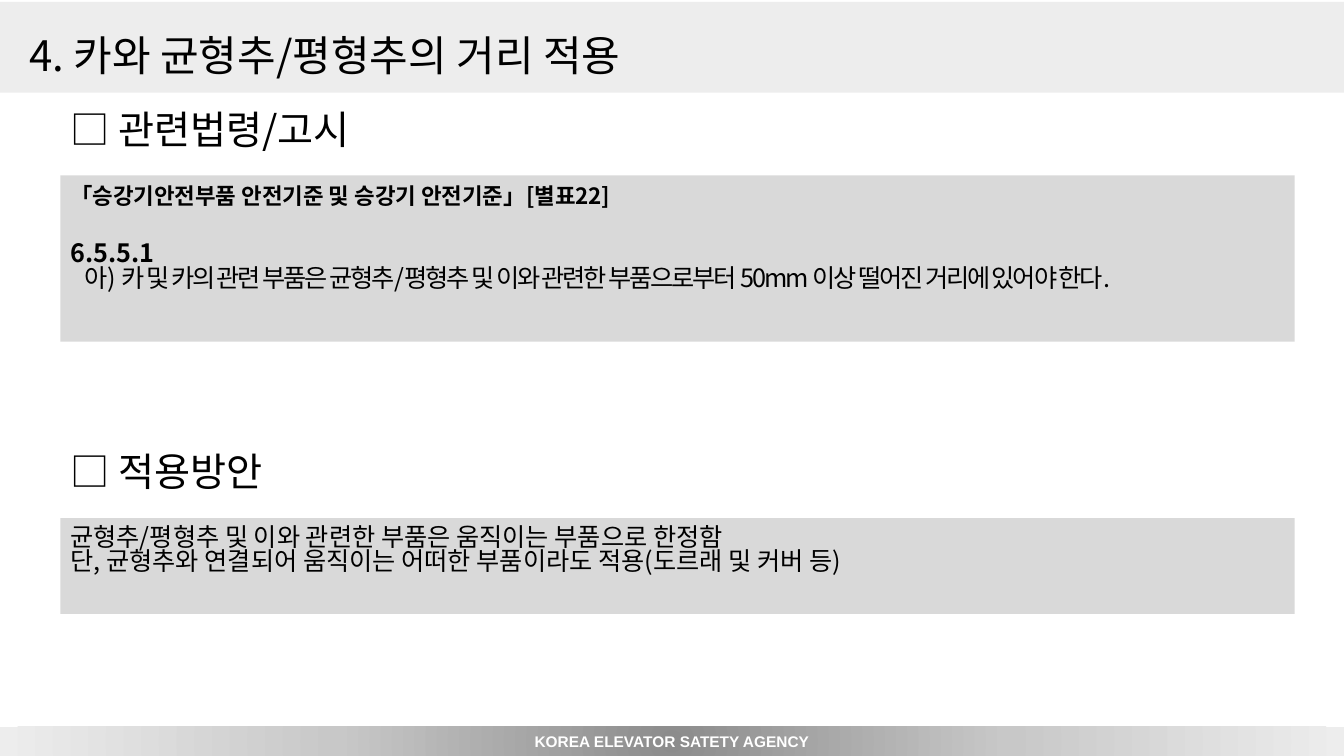
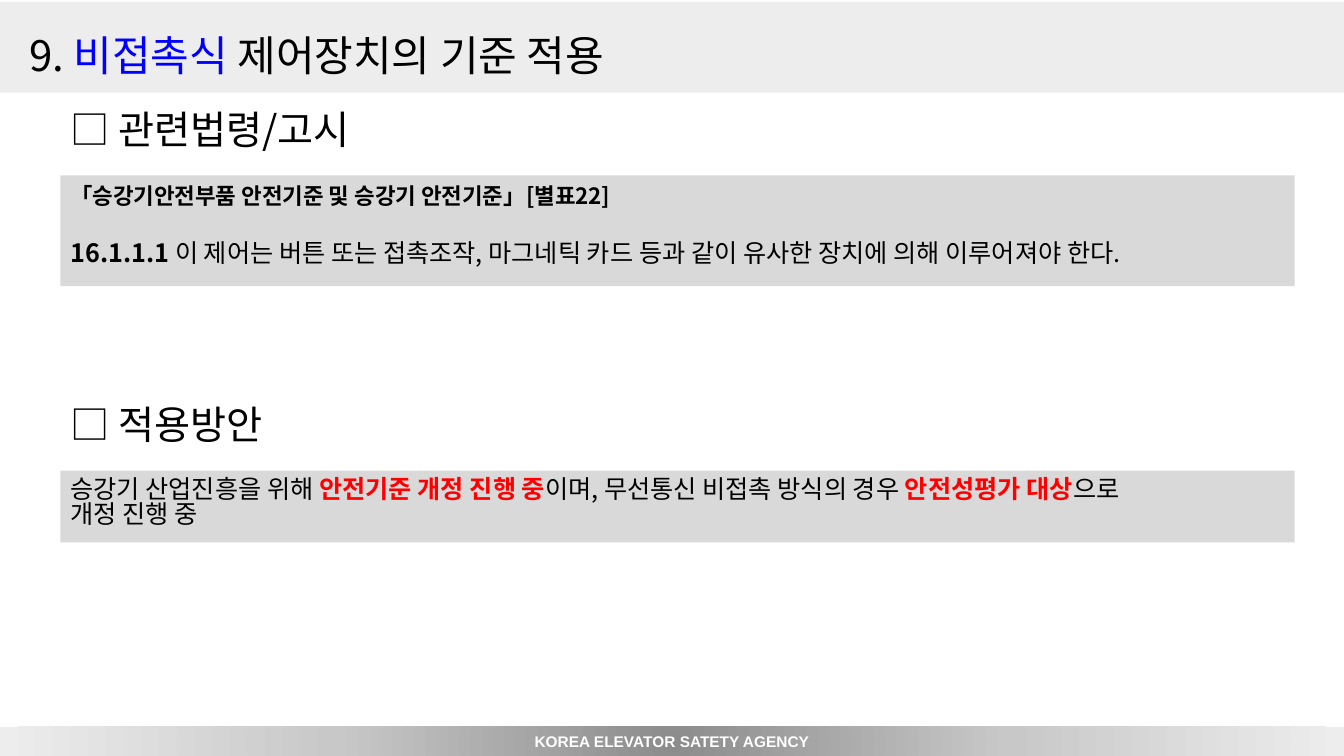
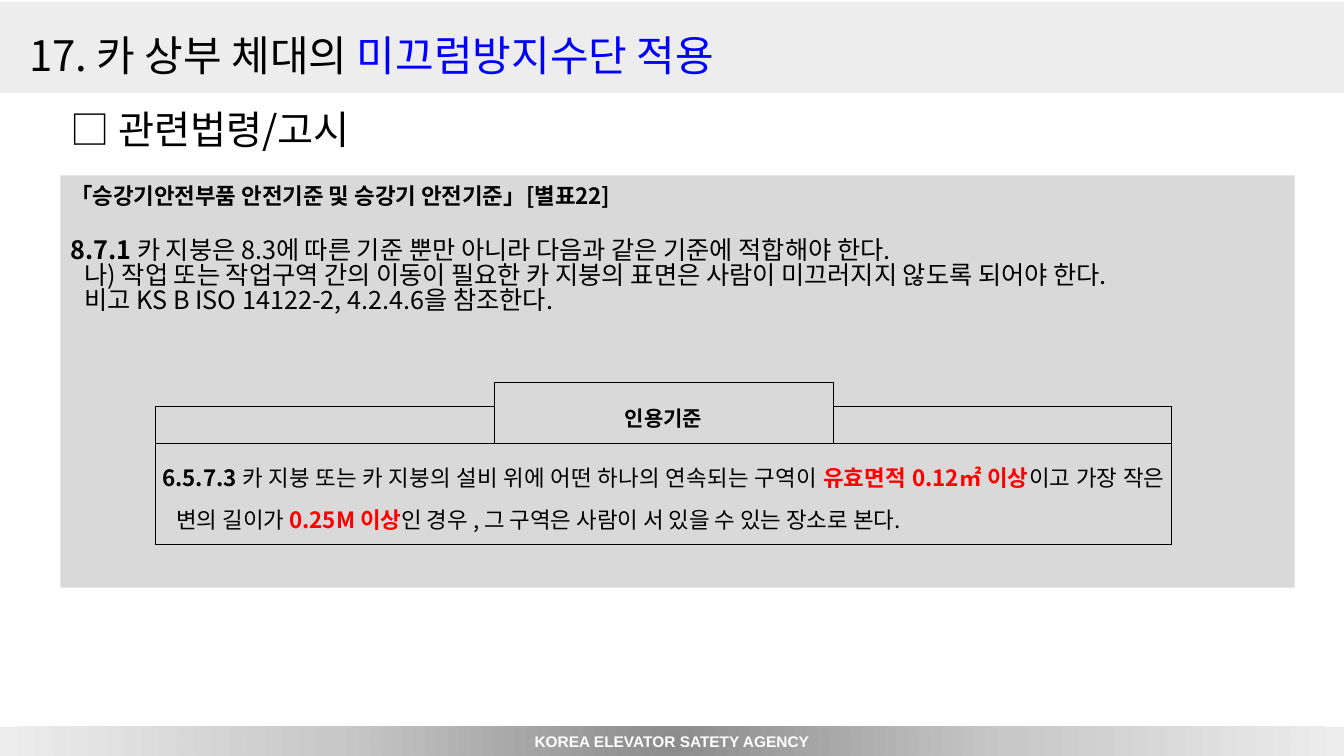
from lxml.etree import SubElement
from pptx import Presentation
from pptx.dml.color import RGBColor
from pptx.enum.shapes import MSO_SHAPE
from pptx.enum.text import MSO_ANCHOR, PP_ALIGN
from pptx.oxml import parse_xml
from pptx.oxml.ns import nsdecls, qn
from pptx.util import Inches, Pt

COLORS = {
    "band": "EDEDED", "panel": "D9D9D9", "dark": "8C8C8C", "mid": "C8C8C8",
    "text": "000000", "white": "FFFFFF", "blue": "0000FF", "red": "FF0000",
}
FONT = "Noto Sans CJK KR"
TIGHT = 0.82
BOLD = {"bold": True}
RED = {"bold": True, "color": "red"}
BLUE = {"color": "blue"}


def write(frame, paragraphs, size, name=FONT, **shared):
    """Fill a frame; each paragraph is (format values, [(text, run values), ...])."""
    for index, (layout_values, spans) in enumerate(paragraphs):
        para = frame.paragraphs[0] if index == 0 else frame.add_paragraph()
        values = {"line_spacing": TIGHT, "alignment": PP_ALIGN.LEFT, **shared, **layout_values}
        properties = para._p.get_or_add_pPr()
        for key in ("marL", "indent"):
            if key in values:
                properties.set(key, str(Inches(values.pop(key))))
        para_size = values.pop("size", size)
        for key, value in values.items():
            setattr(para, key, value)
        for text, run_values in spans:
            span = para.add_run()
            span.text = text
            font_values = {"size": Pt(para_size), "name": name, "bold": False, **run_values}
            color = font_values.pop("color", "text")
            spacing = font_values.pop("spacing", None)
            for key, value in font_values.items():
                setattr(span.font, key, value)
            span.font.color.rgb = RGBColor.from_string(COLORS[color])
            run_properties = span._r.get_or_add_rPr()
            SubElement(run_properties, qn("a:ea")).set("typeface", name)
            if spacing:
                run_properties.set("spc", str(spacing))


def add_panel(page, left, top, width, height, color):
    panel = page.shapes.add_shape(
        MSO_SHAPE.RECTANGLE, Inches(left), Inches(top), Inches(width), Inches(height))
    panel.shadow.inherit = False
    panel.fill.solid()
    panel.fill.fore_color.rgb = RGBColor.from_string(COLORS[color])
    panel.line.fill.background()
    panel.text_frame.word_wrap = True
    panel.text_frame.vertical_anchor = MSO_ANCHOR.TOP
    return panel


LAW_TITLE = ({"size": 16, "line_spacing": 1.07},
             [("「승강기안전부품 안전기준 및 승강기 안전기준」[별표22]", BOLD)])
GAP = {"space_before": Pt(24)}
SMALL_GAP = {"space_before": Pt(22)}
INDENT = {"marL": 0.14, "indent": 0}

slides = [
    {
        "title": [("4. 카와 균형추/평형추의 거리 적용", {})],
        "title_width": 6.72,
        "law_height": 1.65,
        "law": [
            (GAP, [("6.5.5.1", BOLD)]),
            (INDENT, [
                ("아) ", {}),
                ("카 및 카의 관련 부품은 균형추/평형추 및 이와 관련한 부품으로부터 "
                 "50mm 이상 떨어진 거리에 있어야 한다.", {"spacing": -150})]),
        ],
        "plan_top": 4.42,
        "plan_height": 0.95,
        "plan": [
            ({}, [("균형추/평형추 및 이와 관련한 부품은 움직이는 부품으로 한정함", {})]),
            ({}, [("단, 균형추와 연결되어 움직이는 어떠한 부품이라도 적용(도르래 및 커버 등)", {})]),
        ],
    },
    {
        "title": [("9. ", {}), ("비접촉식 ", BLUE), ("제어장치의 기준 적용", {})],
        "title_width": 6.57,
        "law_height": 1.1,
        "law": [
            (GAP, [
                ("16.1.1.1 ", BOLD),
                ("이 제어는 버튼 또는 접촉조작, 마그네틱 카드 등과 같이 유사한 장치에 "
                 "의해 이루어져야 한다.", {})]),
        ],
        "plan_top": 3.95,
        "plan_height": 0.71,
        "plan": [
            ({}, [
                ("승강기 산업진흥을 위해 ", {}), ("안전기준 개정 진행 중", RED),
                ("이며, 무선통신 비접촉 방식의 경우 ", {}), ("안전성평가 대상", RED),
                ("으로", {})]),
            ({}, [("개정 진행 중", {})]),
        ],
    },
    {
        "title": [("17. 카 상부 체대의 ", {}), ("미끄럼방지수단 적용", BLUE)],
        "title_width": 7.79,
        "law_height": 4.09,
        "law": [
            (SMALL_GAP, [
                ("8.7.1 ", BOLD),
                ("카 지붕은 8.3에 따른 기준 뿐만 아니라 다음과 같은 기준에 적합해야 한다.", {})]),
            (INDENT, [("나) 작업 또는 작업구역 간의 이동이 필요한 카 지붕의 표면은 "
                       "사람이 미끄러지지 않도록 되어야 한다.", {})]),
            (INDENT, [("비고 KS B ISO 14122-2, 4.2.4.6을 참조한다.", {})]),
        ],
    },
]

deck = Presentation()
deck.slide_width, deck.slide_height = Inches(13.33), Inches(7.5)
blank = deck.slide_layouts[6]
pages = [deck.slides.add_slide(blank) for _ in slides]

# Title band and footer belong to the layout
band = add_panel(pages[0], 0, 0.02, 13.33, 0.9, "band")
footer = add_panel(pages[0], 0, 7.21, 13.33, 0.29, "dark")
stops = "".join(
    f'<a:gs pos="{position}"><a:srgbClr val="{COLORS[color]}"/></a:gs>'
    for position, color in ((0, "dark"), (50000, "mid"), (100000, "band")))
solid = footer._element.spPr.find(qn("a:solidFill"))
solid.getparent().replace(solid, parse_xml(
    f'<a:gradFill {nsdecls("a")} rotWithShape="1"><a:gsLst>{stops}</a:gsLst>'
    '<a:path path="circle"><a:fillToRect l="50000" t="50000" r="50000" b="50000"/></a:path>'
    '</a:gradFill>'))
footer.text_frame.vertical_anchor = MSO_ANCHOR.MIDDLE
write(footer.text_frame,
      [({}, [("KOREA ELEVATOR SATETY AGENCY", {"bold": True, "color": "white"})])],
      11, "Arial", alignment=PP_ALIGN.CENTER, line_spacing=1.0)
for shared_shape in (band, footer):
    blank.shapes.element.append(shared_shape._element)

for page, content in zip(pages, slides):
    headings = [
        (0.19, 0.28, content["title_width"], 0.61, 30, content["title"]),
        (0.6, 1.03, 3.23, 0.57, 28, [("□ 관련법령/고시", {})]),
    ]
    panels = [(1.74, content["law_height"], 0.05, [LAW_TITLE] + content["law"])]
    if "plan" in content:
        top = content["plan_top"]
        headings.append((0.6, top, 2.3, 0.57, 28, [("□ 적용방안", {})]))
        panels.append((top + 0.72, content["plan_height"], 0.08, content["plan"]))

    for left, top, width, height, size, spans in headings:
        box = page.shapes.add_textbox(Inches(left), Inches(top), Inches(width), Inches(height))
        box.text_frame.word_wrap = False
        box.text_frame.margin_top = Inches(0.1)
        box.text_frame.margin_bottom = 0
        write(box.text_frame, [({}, spans)], size)
    for top, height, inset, paragraphs in panels:
        panel = add_panel(page, 0.6, top, 12.24, height, "panel")
        panel.text_frame.margin_top = Inches(inset)
        write(panel.text_frame, paragraphs, 18)

# Quoted standard: a framed table whose label cell breaks the top edge
row_heights = (0.24, 0.36, 1)
frame = pages[2].shapes.add_table(
    3, 3, Inches(1.54), Inches(3.79), Inches(10.08), Inches(sum(row_heights)))
table = frame.table
table.first_row = table.horz_banding = False
table._tbl.tblPr.find(qn("a:tableStyleId")).text = "{2D5ABB26-0587-4C30-8999-92F81FD0307C}"
for column in table.columns:
    column.width = Inches(3.36)
for row, height in zip(table.rows, row_heights):
    row.height = Inches(height)
table.cell(0, 1).merge(table.cell(1, 1))
table.cell(2, 0).merge(table.cell(2, 2))

cell_texts = {
    (0, 1): (15, PP_ALIGN.CENTER, [("인용기준", BOLD)]),
    (2, 0): (16, PP_ALIGN.JUSTIFY, [
        ("6.5.7.3 ", BOLD),
        ("카 지붕 또는 카 지붕의 설비 위에 어떤 하나의 연속되는 구역이 ", {}),
        ("유효면적 0.12㎡ 이상", RED), ("이고 가장 작은 변의 길이가 ", {}),
        ("0.25M 이상", RED),
        ("인 경우 , 그 구역은 사람이 서 있을 수 있는 장소로 본다.", {})]),
}
cell_sides = [["RB", "LRT", "LB"], ["LRT", "LR", "LRT"], ["LRB", "B", "RB"]]
for row_index, row_sides in enumerate(cell_sides):
    for column_index, sides in enumerate(row_sides):
        cell = table.cell(row_index, column_index)
        cell.margin_left = cell.margin_right = Inches(0.07)
        cell.margin_top = cell.margin_bottom = Inches(0.02)
        cell.vertical_anchor = MSO_ANCHOR.MIDDLE
        for side in sides:
            line = SubElement(cell._tc.get_or_add_tcPr(), qn(f"a:ln{side}"), w=str(Pt(0.28)))
            fill = SubElement(line, qn("a:solidFill"))
            SubElement(fill, qn("a:srgbClr"), val=COLORS["text"])
        cell.fill.background()
        if (row_index, column_index) in cell_texts:
            size, alignment, spans = cell_texts[row_index, column_index]
            write(cell.text_frame, [({"marL": 0.14, "indent": -0.14}, spans)], size,
                  alignment=alignment, line_spacing=1.3)
        else:
            SubElement(cell.text_frame.paragraphs[0]._p, qn("a:endParaRPr"), sz="800")

deck.save("out.pptx")
